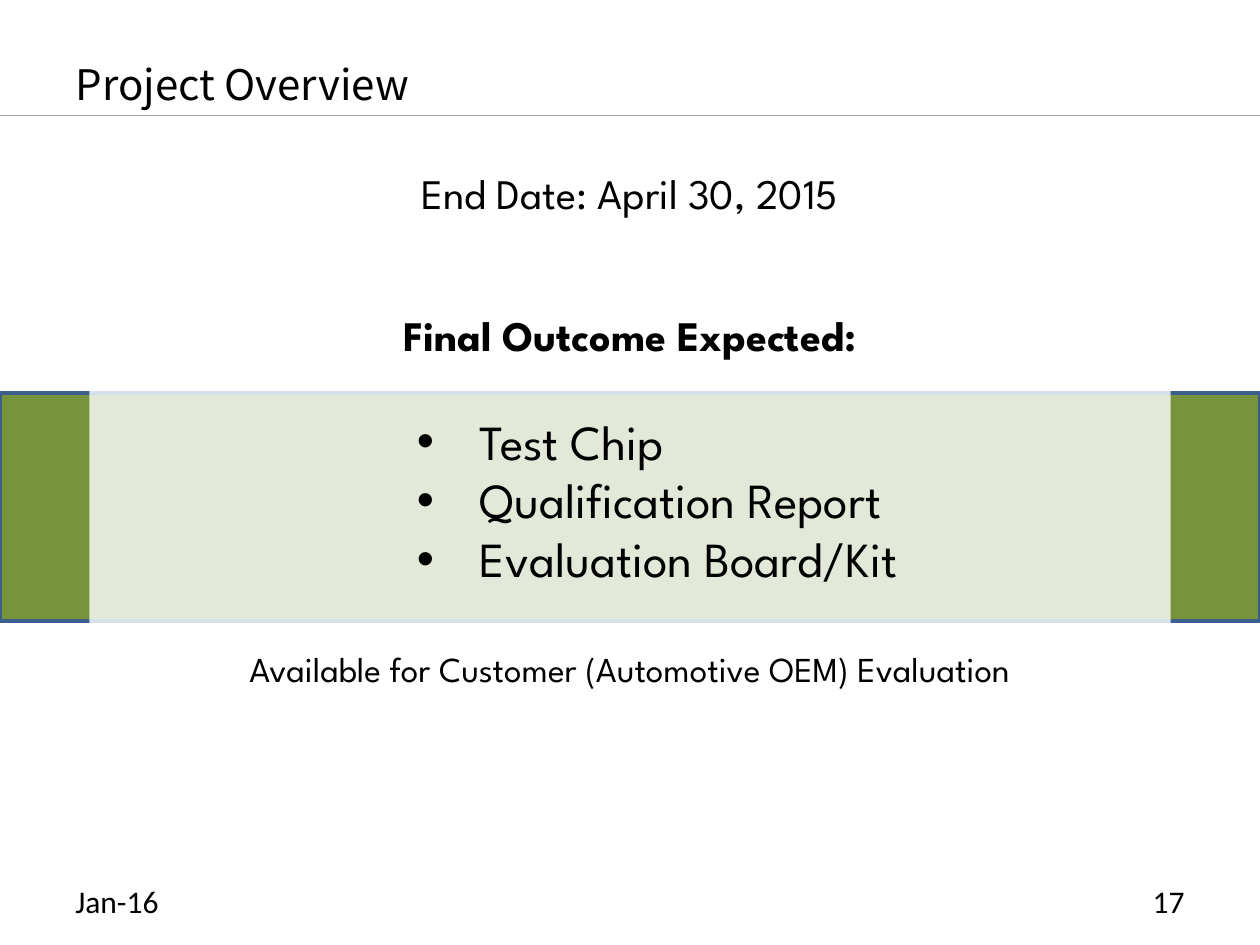
from pptx import Presentation
from pptx.dml.color import RGBColor
from pptx.enum.shapes import MSO_CONNECTOR, MSO_SHAPE
from pptx.enum.text import MSO_ANCHOR, MSO_AUTO_SIZE, PP_ALIGN
from pptx.oxml.ns import qn
from pptx.util import Cm, Pt
from lxml import etree

LEFT, CENTER, RIGHT = PP_ALIGN.LEFT, PP_ALIGN.CENTER, PP_ALIGN.RIGHT
TOP, MIDDLE, BOTTOM = MSO_ANCHOR.TOP, MSO_ANCHOR.MIDDLE, MSO_ANCHOR.BOTTOM
NO_AUTOFIT = MSO_AUTO_SIZE.NONE
RECTANGLE = MSO_SHAPE.RECTANGLE
STRAIGHT = MSO_CONNECTOR.STRAIGHT

SLIDE_W, SLIDE_H = 25.4, 19.05
MARGIN = 1.27
TITLE_FONT, BODY_FONT, FOOTER_FONT = "Noto Sans CJK KR", "League Spartan", "Calibri"
OUTCOMES = ["Test Chip", "Qualification Report", "Evaluation Board/Kit"]


def color(hex_code):
    return RGBColor.from_string(hex_code)


def place(shape, box):
    shape.left, shape.top, shape.width, shape.height = (Cm(v) for v in box)


def prepare_frame(shape, anchor):
    frame = shape.text_frame
    frame.word_wrap = True
    frame.auto_size = NO_AUTOFIT
    frame.vertical_anchor = anchor
    return frame


def style(paragraph, font, size, align=LEFT, bold=False, before=0):
    paragraph.alignment = align
    paragraph.space_before = Pt(before)
    for run in paragraph.runs:
        run.font.name = font
        run.font.size = Pt(size)
        run.font.bold = bold
        run.font.color.rgb = color("000000")


def set_bullet(paragraph, char=None, margin=0, hanging=0):
    """Give the paragraph a bullet, or remove it when no char is given."""
    properties = paragraph._p.get_or_add_pPr()
    properties.set("marL", str(Cm(margin)))
    properties.set("indent", str(-Cm(hanging)))
    if char:
        etree.SubElement(properties, qn("a:buFont")).set("typeface", "Arial")
        etree.SubElement(properties, qn("a:buChar")).set("char", char)
    else:
        etree.SubElement(properties, qn("a:buNone"))


def fill_translucent_white(shape):
    shape.fill.solid()
    shape.fill.fore_color.rgb = color("FFFFFF")
    white = shape._element.spPr.find(qn("a:solidFill"))[0]
    etree.SubElement(white, qn("a:alpha")).set("val", "80000")


def add_header(slide, box):
    """Title with a full-width rule along its lower edge."""
    title = slide.shapes.title
    place(title, box)
    frame = prepare_frame(title, BOTTOM)
    frame.text = "Project Overview"
    style(frame.paragraphs[0], TITLE_FONT, 24)

    rule_y = Cm(box[1] + box[3])
    rule = slide.shapes.add_connector(STRAIGHT, Cm(SLIDE_W), rule_y, 0, rule_y)
    rule.line.color.rgb = color("A6A6A6")
    rule.line.width = Pt(0.75)
    etree.SubElement(rule._element.spPr, qn("a:effectLst"))


def add_band(slide, box):
    """Green band behind everything else."""
    band = slide.shapes.add_shape(RECTANGLE, *(Cm(v) for v in box))
    band.shadow.inherit = False
    band.fill.solid()
    band.fill.fore_color.rgb = color("77933C")
    band.line.color.rgb = color("3A5F8C")
    band.line.width = Pt(2)
    slide.shapes._spTree.insert(2, band._element)


def add_end_date(slide, box):
    end_date = slide.shapes.add_textbox(*(Cm(v) for v in box))
    fill_translucent_white(end_date)
    frame = prepare_frame(end_date, TOP)
    frame.text = "End Date: April 30, 2015"
    style(frame.paragraphs[0], BODY_FONT, 24, CENTER)


def add_outcomes(slide, box):
    """Heading, bulleted outcomes and closing remark on a translucent panel."""
    panel = slide.placeholders[1]
    place(panel, box)
    fill_translucent_white(panel)
    frame = prepare_frame(panel, TOP)

    heading = frame.paragraphs[0]
    heading.text = "Final Outcome Expected:"
    set_bullet(heading)
    style(heading, BODY_FONT, 24, CENTER, bold=True)

    for index, outcome in enumerate(OUTCOMES):
        item = frame.add_paragraph()
        item.text = outcome
        item.level = 5
        set_bullet(item, "•", margin=7.62, hanging=1.27)
        style(item, BODY_FONT, 28, before=0 if index else 29)

    remark = frame.add_paragraph()
    remark.text = "Available for Customer (Automotive OEM) Evaluation"
    set_bullet(remark)
    style(remark, BODY_FONT, 20, CENTER, before=34)


def add_footer(slide, box):
    """Date at the left end of the box, page number at the right end."""
    left, top, width, height = box
    part_width = 5.92
    for text, x, align in (("Jan-16", left, LEFT),
                           ("17", left + width - part_width, RIGHT)):
        part = slide.shapes.add_textbox(Cm(x), Cm(top), Cm(part_width), Cm(height))
        frame = prepare_frame(part, MIDDLE)
        frame.text = text
        style(frame.paragraphs[0], FOOTER_FONT, 18, align)


def main():
    deck = Presentation()
    deck.slide_width, deck.slide_height = Cm(SLIDE_W), Cm(SLIDE_H)
    slide = deck.slides.add_slide(deck.slide_layouts[1])
    add_band(slide, (0, 7.92, SLIDE_W, 4.6))
    add_header(slide, (MARGIN, 0.73, 22.23, 1.6))
    add_footer(slide, (MARGIN, 17.66, SLIDE_W - 2 * MARGIN, 1.01))
    add_end_date(slide, (5.5, 3.25, 14.4, 1.28))
    add_outcomes(slide, (1.8, 6.12, 21.8, 7.95))
    deck.save("out.pptx")


if __name__ == "__main__":
    main()
